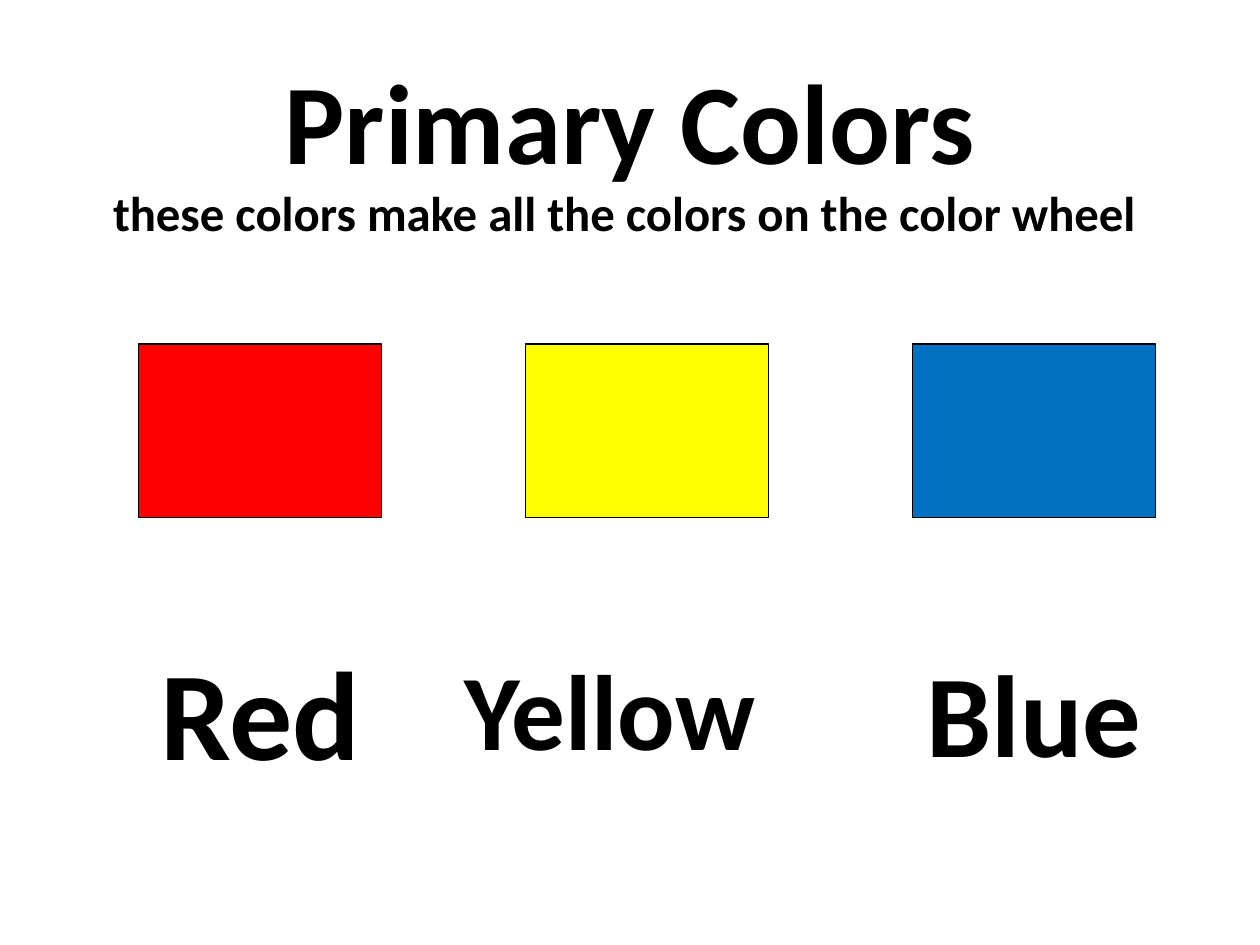
from pptx import Presentation
from pptx.dml.color import RGBColor
from pptx.enum.shapes import MSO_SHAPE
from pptx.enum.text import MSO_ANCHOR, MSO_AUTO_SIZE, PP_ALIGN
from pptx.util import Inches, Pt

RECT = MSO_SHAPE.RECTANGLE
MIDDLE = MSO_ANCHOR.MIDDLE
CENTER = PP_ALIGN.CENTER
NO_FIT = MSO_AUTO_SIZE.NONE

BLACK = "000000"
TITLE = [
    ("Primary Colors", 64.8),
    ("these colors make all the colors on the color wheel ", 27.9),
]
# name, fill, text size, line spacing, extra label width on the left
COLORS = [
    ("Red", "FF0000", 72, 0.9, 0),
    ("Yellow", "FFFF00", 61.2, 0.8, 0.59),
    ("Blue", "0070C0", 66.6, 0.9, 0),
]
LEFT, STEP, WIDTH = 1.1, 3.07, 1.93
SWATCH_TOP, SWATCH_HEIGHT = 2.73, 1.38
LABEL_TOP, LABEL_HEIGHT = 4.99, 1.45


def rgb(value):
    return RGBColor.from_string(value)


def box(*lengths):
    return [Inches(n) for n in lengths]


def setup_frame(tf, inset):
    frame = dict(word_wrap=True, auto_size=NO_FIT, vertical_anchor=MIDDLE,
                 margin_left=inset, margin_right=inset)
    for name, value in frame.items():
        setattr(tf, name, value)


def add_run(p, text, size):
    r = p.add_run()
    r.text = text
    for name, value in dict(name="Calibri", size=Pt(size), bold=True).items():
        setattr(r.font, name, value)
    r.font.color.rgb = rgb(BLACK)


def add_title(slide):
    sp = slide.shapes.title
    sp.left, sp.top, sp.width, sp.height = box(0.5, 0.6, 9, 1.25)
    setup_frame(sp.text_frame, Inches(0.1))
    p = sp.text_frame.paragraphs[0]
    p.alignment, p.line_spacing = CENTER, 0.9
    for i, (text, size) in enumerate(TITLE):
        if i:
            p.add_line_break()
        add_run(p, text, size)


def add_swatch(slide, x, fill):
    sp = slide.shapes.add_shape(RECT, *box(x, SWATCH_TOP, WIDTH, SWATCH_HEIGHT))
    sp.shadow.inherit = False
    sp.fill.solid()
    sp.fill.fore_color.rgb = rgb(fill)
    sp.line.color.rgb = rgb(BLACK)
    sp.line.width = Pt(0.75)


def add_label(slide, x, width, text, size, spacing):
    sp = slide.shapes.add_textbox(*box(x, LABEL_TOP, width, LABEL_HEIGHT))
    setup_frame(sp.text_frame, 0)
    p = sp.text_frame.paragraphs[0]
    p.alignment, p.line_spacing = CENTER, spacing
    add_run(p, text, size)


def main():
    prs = Presentation()
    prs.slide_width, prs.slide_height = box(10, 7.5)
    slide = prs.slides.add_slide(prs.slide_layouts[5])
    add_title(slide)
    for i, (name, fill, size, spacing, extra) in enumerate(COLORS):
        x = LEFT + i * STEP
        add_swatch(slide, x, fill)
        add_label(slide, x - extra, WIDTH + extra, name, size, spacing)
    prs.save("out.pptx")


if __name__ == "__main__":
    main()
